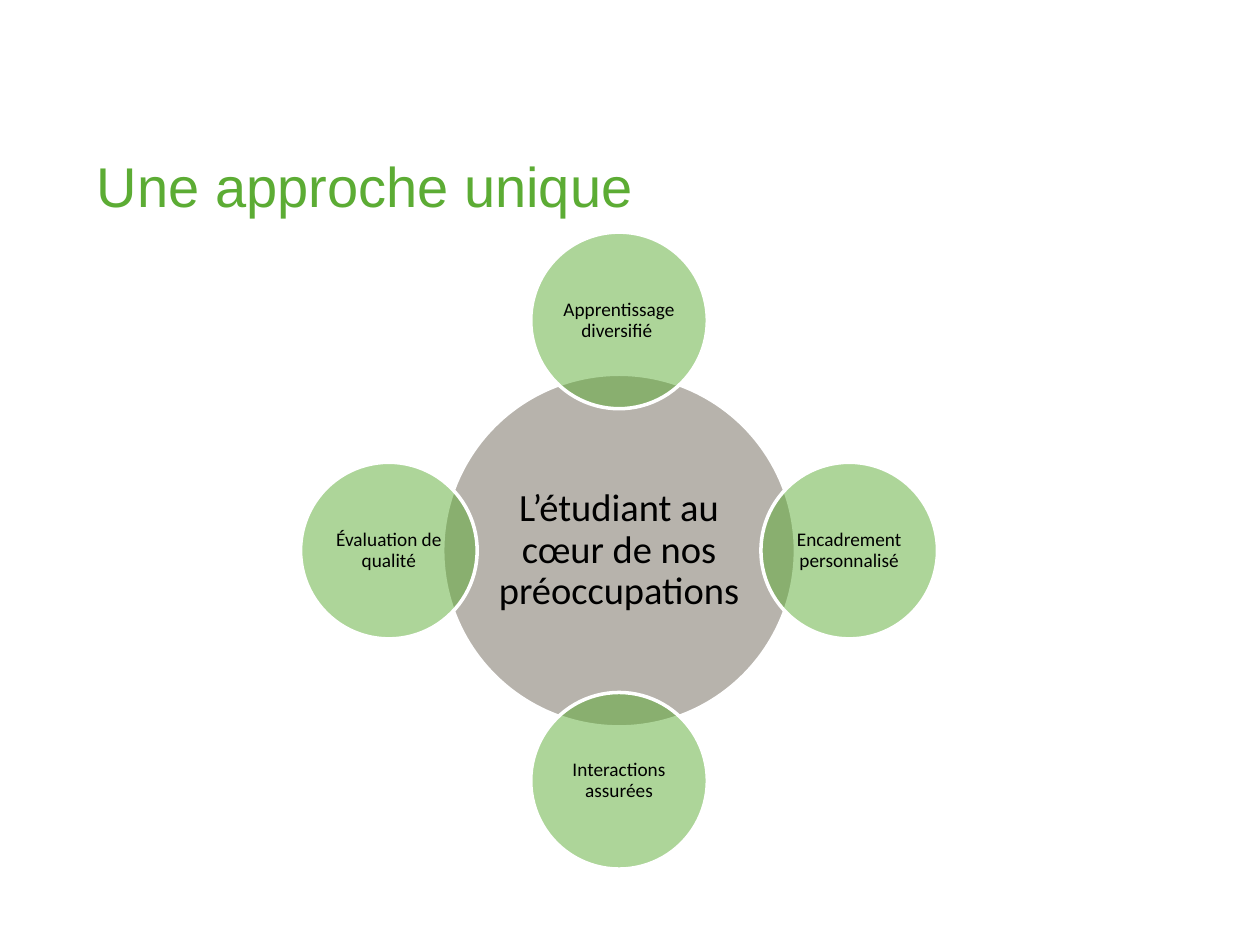
"""Build the slide on a student-centred approach, with four circles around a hub."""
from math import cos, radians, sin

from lxml import etree
from pptx import Presentation
from pptx import util as u
from pptx.dml.color import RGBColor
from pptx.enum import shapes, text
from pptx.oxml import ns

GREEN = RGBColor(0x5C, 0xAC, 0x34)
TAUPE = RGBColor(0x71, 0x68, 0x5A)
WHITE = RGBColor(0xFF, 0xFF, 0xFF)
BLACK = RGBColor(0x00, 0x00, 0x00)

CENTRE_X, CENTRE_Y = 12.48, 11.1
ORBIT = 4.64
HUB_SIZE, PILLAR_SIZE = 7.11, 3.56
PILLARS = [
    "Apprentissage diversifié ",
    "Encadrement personnalisé",
    "Interactions assurées",
    "Évaluation de qualité",
]


def style_text(paragraph, font_name, size, colour):
    """Apply one font, size and colour to the runs of a paragraph."""
    for run in paragraph.runs:
        run.font.name = font_name
        run.font.size = u.Pt(size)
        run.font.color.rgb = colour


def fill_half_transparent(shape, colour):
    """Fill a shape with a colour at 50 % opacity."""
    shape.fill.solid()
    shape.fill.fore_color.rgb = colour
    tint = shape.fill._xPr.find(ns.qn("a:solidFill"))[0]
    etree.SubElement(tint, ns.qn("a:alpha")).set("val", "50000")


def add_title(slide, wording):
    """Place and format the title placeholder."""
    title = slide.shapes.title
    title.left, title.top = u.Cm(1.7), u.Cm(2.92)
    title.width, title.height = u.Cm(21.16), u.Cm(3.18)
    frame = title.text_frame
    frame.text = wording
    frame.vertical_anchor = text.MSO_ANCHOR.TOP
    frame.paragraphs[0].alignment = text.PP_ALIGN.LEFT
    style_text(frame.paragraphs[0], "Arial", 32, GREEN)


def add_circle(diagram, x, y, size, colour, wording, font_size, inset):
    """Add a labelled translucent circle centred on x, y."""
    circle = diagram.shapes.add_shape(
        shapes.MSO_SHAPE.OVAL,
        u.Cm(x - size / 2), u.Cm(y - size / 2), u.Cm(size), u.Cm(size))
    circle.shadow.inherit = False
    fill_half_transparent(circle, colour)
    circle.line.color.rgb = WHITE
    circle.line.width = u.Pt(2)
    frame = circle.text_frame
    frame.text = wording
    frame.word_wrap = True
    frame.vertical_anchor = text.MSO_ANCHOR.MIDDLE
    frame.margin_left = frame.margin_right = u.Cm(inset)
    frame.margin_top = frame.margin_bottom = u.Cm(inset)
    label = frame.paragraphs[0]
    label.alignment = text.PP_ALIGN.CENTER
    label.line_spacing = 0.9
    style_text(label, "Calibri", font_size, BLACK)


def add_diagram(slide):
    """Add the hub and its pillars, clockwise from the top."""
    diagram = slide.shapes.add_group_shape()
    add_circle(diagram, CENTRE_X, CENTRE_Y, HUB_SIZE, TAUPE,
               "L’étudiant au cœur de nos préoccupations", 22, 0.08)
    for index, pillar in enumerate(PILLARS):
        angle = radians(360 / len(PILLARS) * index - 90)
        add_circle(diagram, CENTRE_X + ORBIT * cos(angle),
                   CENTRE_Y + ORBIT * sin(angle),
                   PILLAR_SIZE, GREEN, pillar, 11, 0.04)


def main():
    """Create and save the presentation."""
    deck = Presentation()
    deck.slide_width, deck.slide_height = u.Cm(25.4), u.Cm(19.05)
    slide = deck.slides.add_slide(deck.slide_layouts.get_by_name("Title Only"))
    add_title(slide, "Une approche unique")
    add_diagram(slide)
    deck.save("out.pptx")


if __name__ == "__main__":
    main()
